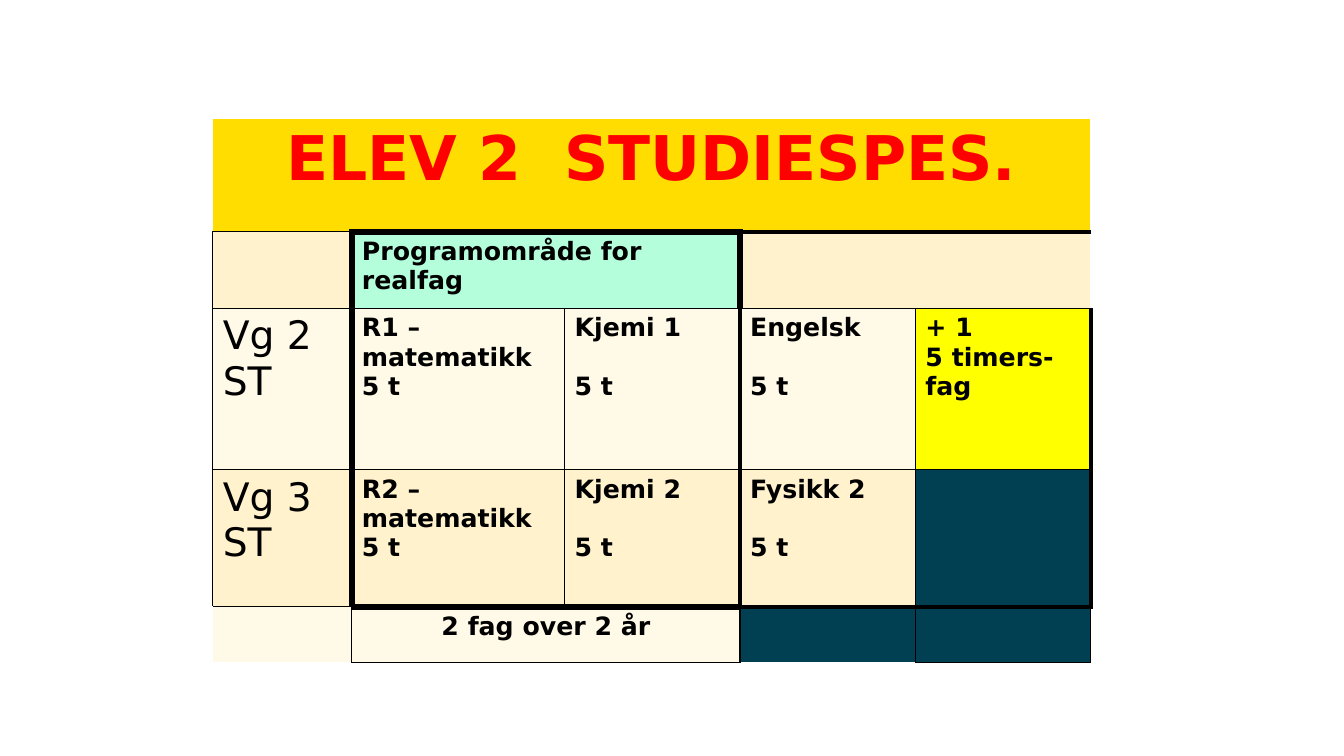
"""Build a slide with the subject plan of one pupil as a bordered table."""
from dataclasses import dataclass

from lxml.etree import SubElement
from pptx import Presentation
from pptx.dml.color import RGBColor
from pptx.enum.text import PP_ALIGN as Align
from pptx.oxml.ns import qn
from pptx.table import Table, _Cell as Cell
from pptx.text.text import TextFrame
from pptx.util import Emu, Pt

EMU_PER_PX = 9144
SLIDE_SIZE = (1333, 750)
TABLE_ORIGIN = (211, 117)
COLUMN_WIDTHS = (138, 211, 174, 174, 174)
ROW_HEIGHTS = (113, 76, 160, 136, 55)
FONT = "DejaVu Sans"
BLANK_LAYOUT = 6
LINE_GAP = 21
COLORS = {
    "black": "000000",
    "white": "FFFFFF",
    "red": "FF0000",
    "gold": "FFDD00",
    "sand": "FFF2CC",
    "cream": "FFF9E7",
    "mint": "B4FEDB",
    "yellow": "FFFF00",
    "petrol": "004052",
}


@dataclass(frozen=True)
class PlanCell:
    """A table cell; edges are left, top, right and bottom widths in points."""

    row: int
    column: int
    fill: str
    lines: tuple[str, ...] = ()
    edges: tuple[float, float, float, float] = (1, 1, 4.5, 1)
    white_edges: str = ""
    span: int = 1
    size: int = 18
    bold: bool = True
    color: str = "black"
    align: Align = Align.LEFT
    gap: int = 0


PLAN = (
    PlanCell(0, 0, "gold", ("ELEV 2  STUDIESPES.",), (1, 1, 1, 1), "LTR",
             span=5, size=44, color="red", align=Align.CENTER),
    PlanCell(1, 0, "sand"),
    PlanCell(1, 1, "mint", ("Programområde for realfag",), (4.5, 4.5, 3, 1), span=2),
    PlanCell(1, 3, "sand", edges=(3, 3, 3, 1), span=2),
    PlanCell(2, 0, "cream", ("Vg 2 ST",), size=28, bold=False),
    PlanCell(2, 1, "cream", ("R1 – matematikk", "5 t"), (4.5, 1, 1, 1)),
    PlanCell(2, 2, "cream", ("Kjemi 1", "5 t"), (1, 1, 3, 1), gap=LINE_GAP),
    PlanCell(2, 3, "cream", ("Engelsk", "5 t"), (3, 1, 1, 1), gap=LINE_GAP),
    PlanCell(2, 4, "yellow", ("+ 1", "5 timers-fag"), (1, 1, 3, 1)),
    PlanCell(3, 0, "sand", ("Vg 3 ST",), size=28, bold=False),
    PlanCell(3, 1, "sand", ("R2 – matematikk", "5 t"), (4.5, 1, 1, 4.5)),
    PlanCell(3, 2, "sand", ("Kjemi 2", "5 t"), (1, 1, 3, 4.5), gap=LINE_GAP),
    PlanCell(3, 3, "sand", ("Fysikk 2", "5 t"), (3, 1, 1, 3), gap=LINE_GAP),
    PlanCell(3, 4, "petrol", edges=(1, 1, 3, 3)),
    PlanCell(4, 0, "cream", edges=(1, 1, 1, 1), white_edges="LB"),
    PlanCell(4, 1, "cream", ("2 fag over 2 år",), (1, 4.5, 1, 1), span=2,
             align=Align.CENTER),
    PlanCell(4, 3, "petrol", edges=(1, 3, 1, 1), white_edges="B"),
    PlanCell(4, 4, "petrol", edges=(1, 3, 1, 1)),
)


def px(length: int) -> Emu:
    """Turn pixels into EMU."""
    return Emu(length * EMU_PER_PX)


def rgb(name: str) -> RGBColor:
    """Look up a named colour."""
    return RGBColor.from_string(COLORS[name])


def write_text(text_frame: TextFrame, lines: tuple[str, ...], *, size: int,
               bold: bool, color: str, align: Align, gap: int) -> None:
    """Write one paragraph per line, with a gap in points between them."""
    for index, line in enumerate(lines):
        paragraph = text_frame.add_paragraph() if index else text_frame.paragraphs[0]
        paragraph.alignment = align
        if index and gap:
            paragraph.space_before = Pt(gap)
        run = paragraph.add_run()
        run.text = line
        run.font.name = FONT
        run.font.size = Pt(size)
        run.font.bold = bold
        run.font.color.rgb = rgb(color)


def draw_borders(cell: Cell, widths: dict[str, float], white_edges: str) -> None:
    """Add the given sides of a cell's border."""
    properties = cell._tc.get_or_add_tcPr()
    for side in "LRTB":
        if side in widths:
            line = SubElement(properties, qn(f"a:ln{side}"), w=str(Pt(widths[side])))
            fill = SubElement(line, qn("a:solidFill"))
            name = "white" if side in white_edges else "black"
            SubElement(fill, qn("a:srgbClr"), val=COLORS[name])


def draw_cell(table: Table, plan: PlanCell) -> None:
    """Merge, border, fill and write one cell of the plan."""
    last = plan.column + plan.span - 1
    cell = table.cell(plan.row, plan.column)
    if plan.span > 1:
        cell.merge(table.cell(plan.row, last))
    for column in range(plan.column, last + 1):
        part = table.cell(plan.row, column)
        widths = dict(zip("LTRB", plan.edges))
        if column > plan.column:
            del widths["L"]
        if column < last:
            del widths["R"]
        draw_borders(part, widths, plan.white_edges)
        part.fill.solid()
        part.fill.fore_color.rgb = rgb(plan.fill)
    write_text(cell.text_frame, plan.lines, size=plan.size, bold=plan.bold,
               color=plan.color, align=plan.align, gap=plan.gap)


def main() -> None:
    """Build and save the presentation."""
    presentation = Presentation()
    presentation.slide_width, presentation.slide_height = map(px, SLIDE_SIZE)
    slide = presentation.slides.add_slide(presentation.slide_layouts[BLANK_LAYOUT])
    table = slide.shapes.add_table(
        len(ROW_HEIGHTS), len(COLUMN_WIDTHS), *map(px, TABLE_ORIGIN),
        px(sum(COLUMN_WIDTHS)), px(sum(ROW_HEIGHTS))).table
    table.first_row = table.horz_banding = False
    for column, width in zip(table.columns, COLUMN_WIDTHS):
        column.width = px(width)
    for row, height in zip(table.rows, ROW_HEIGHTS):
        row.height = px(height)
    for plan in PLAN:
        draw_cell(table, plan)
    presentation.save("out.pptx")


if __name__ == "__main__":
    main()
